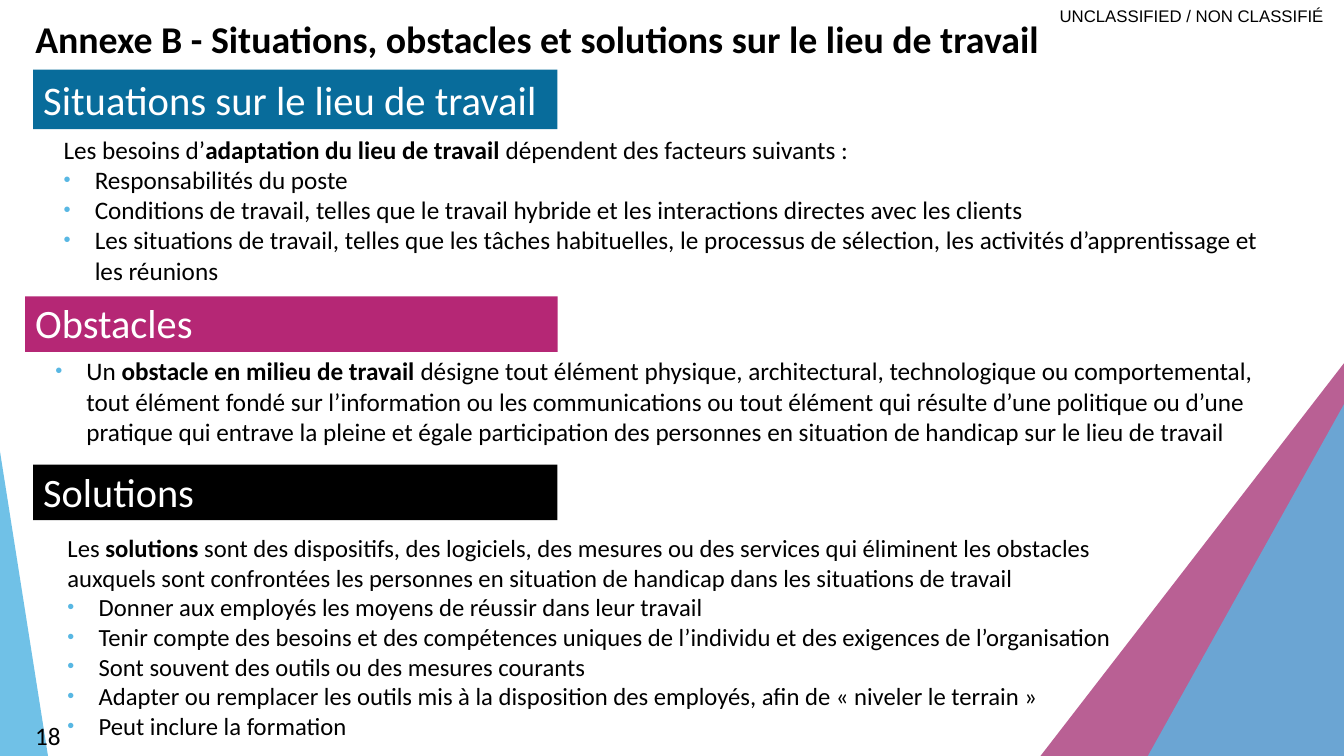
from lxml.etree import SubElement
from pptx import Presentation
from pptx.dml.color import RGBColor
from pptx.enum.shapes import MSO_SHAPE
from pptx.enum.text import MSO_ANCHOR, MSO_AUTO_SIZE, PP_ALIGN
from pptx.oxml.ns import qn
from pptx.util import Inches, Pt

COLORS = {
    "black": "000000",
    "white": "FFFFFF",
    "blue": "086C9B",
    "pink": "B52775",
    "magenta": "9E246B",
    "sky": "58B7E3",
}
HANGING = Inches(0.31)

# (bulleted, text); ** switches bold on and off
SITUATIONS = [
    (False, "Les besoins d’**adaptation du lieu de travail **dépendent des facteurs suivants :"),
    (True, "Responsabilités du poste"),
    (True, "Conditions de travail, telles que le travail hybride et les interactions "
           "directes avec les clients"),
    (True, "Les situations de travail, telles que les tâches habituelles, le processus de "
           "sélection, les activités d’apprentissage et les réunions"),
]
OBSTACLES = [
    (True, "Un **obstacle en milieu de travail **désigne tout élément physique, architectural, "
           "technologique ou comportemental, tout élément fondé sur l’information ou les "
           "communications ou tout élément qui résulte d’une politique ou d’une pratique qui "
           "entrave la pleine et égale participation des personnes en situation de handicap "
           "sur le lieu de travail"),
]
SOLUTIONS = [
    (False, "Les **solutions** sont des dispositifs, des logiciels, des mesures ou des services "
            "qui éliminent les obstacles auxquels sont confrontées les personnes en situation "
            "de handicap dans les situations de travail"),
    (True, "Donner aux employés les moyens de réussir dans leur travail"),
    (True, "Tenir compte des besoins et des compétences uniques de l’individu et des exigences "
           "de l’organisation"),
    (True, "Sont souvent des outils ou des mesures courants"),
    (True, "Adapter ou remplacer les outils mis à la disposition des employés, afin de "
           "« niveler le terrain »"),
    (True, "Peut inclure la formation"),
]


def rgb(name):
    return RGBColor.from_string(COLORS[name])


def place(sp, box):
    sp.left, sp.top, sp.width, sp.height = [Inches(v) for v in box]


def style_run(r, size, color="black", bold=False, font="Calibri"):
    r.font.size = Pt(size)
    r.font.name = font
    r.font.bold = bold
    r.font.color.rgb = rgb(color)


def set_line(sp, text, size, anchor, align=PP_ALIGN.LEFT, **style):
    """Write one styled line of text into a shape."""
    tf = sp.text_frame
    tf.word_wrap = True
    tf.auto_size = MSO_AUTO_SIZE.NONE
    tf.vertical_anchor = anchor
    tf.text = text
    p = tf.paragraphs[0]
    p.alignment = align
    style_run(p.runs[0], size, **style)


def set_bullet(p, bulleted):
    pPr = p._p.get_or_add_pPr()
    pPr.set("marL", str(HANGING if bulleted else 0))
    pPr.set("indent", str(-HANGING if bulleted else 0))
    if not bulleted:
        SubElement(pPr, qn("a:buNone"))
        return
    clr = SubElement(pPr, qn("a:buClr"))
    SubElement(clr, qn("a:srgbClr"), val=COLORS["sky"])
    SubElement(pPr, qn("a:buSzPct"), val="80000")
    SubElement(pPr, qn("a:buFont"), typeface="Arial")
    SubElement(pPr, qn("a:buChar"), char="•")


def set_list(sp, items, size, first_space=0):
    tf = sp.text_frame
    tf.word_wrap = True
    tf.auto_size = MSO_AUTO_SIZE.NONE
    tf.vertical_anchor = MSO_ANCHOR.TOP
    for i, (bulleted, text) in enumerate(items):
        p = tf.add_paragraph() if i else tf.paragraphs[0]
        p.alignment = PP_ALIGN.LEFT
        p.space_before = Pt(0 if i else first_space)
        set_bullet(p, bulleted)
        for j, part in enumerate(text.split("**")):
            r = p.add_run()
            r.text = part
            style_run(r, size, bold=j % 2 == 1)


def add_filled(s, kind, box, color):
    sp = s.shapes.add_shape(kind, *[Inches(v) for v in box])
    sp.shadow.inherit = False
    sp.fill.solid()
    sp.fill.fore_color.rgb = rgb(color)
    sp.line.fill.background()
    return sp


def add_triangle(s, box, color, apex, opacity):
    sp = add_filled(s, MSO_SHAPE.ISOSCELES_TRIANGLE, box, color)
    sp.adjustments[0] = apex
    clr = sp.fill._xPr.find(qn("a:solidFill")).find(qn("a:srgbClr"))
    SubElement(clr, qn("a:alpha"), val=str(opacity * 1000))


def add_banner(s, text, box, color, size=28.8, anchor=MSO_ANCHOR.BOTTOM):
    sp = add_filled(s, MSO_SHAPE.RECTANGLE, box, color)
    set_line(sp, text, size, anchor, color="white")


def add_box(s, box):
    return s.shapes.add_textbox(*[Inches(v) for v in box])


def add_classification(s):
    sp = add_box(s, (10.11, 0, 3.02, 0.31))
    tf = sp.text_frame
    tf.margin_left = tf.margin_right = tf.margin_top = tf.margin_bottom = 0
    set_line(sp, "UNCLASSIFIED / NON CLASSIFIÉ", 12, MSO_ANCHOR.MIDDLE,
             PP_ALIGN.RIGHT, font="Arial")


def main():
    prs = Presentation()
    prs.slide_width, prs.slide_height = Inches(13.33), Inches(7.5)
    s = prs.slides.add_slide(prs.slide_layouts[1])

    add_triangle(s, (10.25, 3.59, 3.09, 4), "magenta", 1, 72)
    add_triangle(s, (11.34, 4.01, 1.99, 3.57), "sky", 1, 80)
    add_triangle(s, (0, 4.48, 0.49, 3.11), "sky", 0, 85)
    add_classification(s)

    title, body = s.shapes.title, s.placeholders[1]
    place(title, (0.25, 0.11, 12.22, 0.55))
    set_line(title, "Annexe B - Situations, obstacles et solutions sur le lieu de travail",
             27, MSO_ANCHOR.BOTTOM, bold=True)

    add_banner(s, "Situations sur le lieu de travail", (0.33, 0.69, 5.2, 0.59),
               "blue", 29, MSO_ANCHOR.MIDDLE)
    place(body, (0.53, 1.28, 12.24, 1.66))
    set_list(body, SITUATIONS, 18, first_space=10)

    add_banner(s, "Obstacles", (0.25, 2.94, 5.28, 0.55), "pink")
    set_list(add_box(s, (0.45, 3.48, 12.24, 1.26)), OBSTACLES, 18, first_space=10)

    add_banner(s, "Solutions", (0.33, 4.61, 5.2, 0.55), "black")
    set_list(add_box(s, (0.57, 5.24, 10.95, 2.33)), SOLUTIONS, 17.6)

    set_line(add_box(s, (-0.05, 7.1, 0.75, 0.4)), "18", 18, MSO_ANCHOR.MIDDLE, PP_ALIGN.RIGHT)
    prs.save("out.pptx")


if __name__ == "__main__":
    main()
